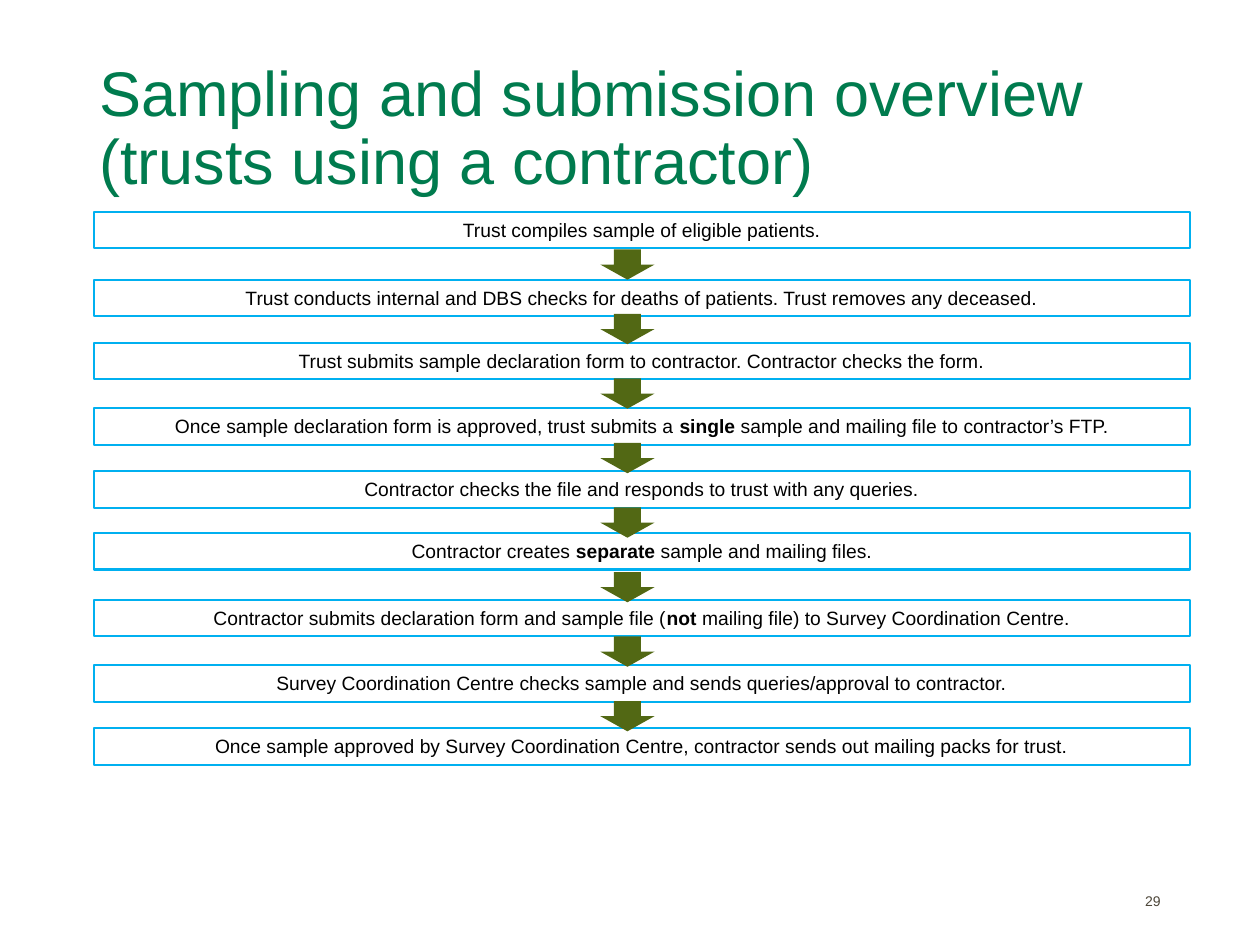
import pptx
import pptx.dml.color
import pptx.enum.shapes
import pptx.enum.text
import pptx.util

COLORS = {"title": "007B4E", "border": "00B0F0", "text": "000000",
          "arrow": "526814", "number": "4D4639"}
FONT = "Arial"
SHAPE = pptx.enum.shapes.MSO_SHAPE
ALIGN = pptx.enum.text.PP_ALIGN
ANCHOR = pptx.enum.text.MSO_ANCHOR

# The slide is a grid of 100 columns by 75 rows.
CELL = pptx.util.Inches(0.1)
TITLE_BOX = (6.9, 4, 86.2, 12.6)
FLOW_BOX = (7.45, 16.8, 87, 43.9)
NUMBER_BOX = (70.6, 69.5, 22.5, 4)

STEP_HEIGHT = 2.9
ARROW_WIDTH, ARROW_HEIGHT = 4.3, 2.4
ARROW_LEFT, ARROW_TOP, ARROW_PITCH = 40.2, 3, 5.12

# Row of each step below the top of the flow, and its text; ** marks bold.
STEPS = [
    (0, "Trust compiles sample of eligible patients."),
    (5.4, "Trust conducts internal and DBS checks for deaths of patients. "
          "Trust removes any deceased."),
    (10.4, "Trust submits sample declaration form to contractor. "
           "Contractor checks the form."),
    (15.6, "Once sample declaration form is approved, trust submits a "
           "**single** sample and mailing file to contractor’s FTP."),
    (20.6, "Contractor checks the file and responds to trust with any queries."),
    (25.5, "Contractor creates **separate** sample and mailing files."),
    (30.8, "Contractor submits declaration form and sample file "
           "(**not **mailing file) to Survey Coordination Centre."),
    (36, "Survey Coordination Centre checks sample and sends "
         "queries/approval to contractor."),
    (41, "Once sample approved by Survey Coordination Centre, "
         "contractor sends out mailing packs for trust."),
]


def rgb(name):
    return pptx.dml.color.RGBColor.from_string(COLORS[name])


def grid(box):
    """Turn left, top, width and height in grid cells into lengths."""
    return [round(value * CELL) for value in box]


def write_text(shape, text, size, color, align=ALIGN.LEFT,
               anchor=ANCHOR.TOP, line_spacing=None):
    """Fill a shape with one paragraph; text between ** marks is bold."""
    frame = shape.text_frame
    frame.word_wrap = True
    frame.vertical_anchor = anchor
    paragraph = frame.paragraphs[0]
    paragraph.alignment = align
    if line_spacing:
        paragraph.line_spacing = line_spacing
    for index, part in enumerate(text.split("**")):
        run = paragraph.add_run()
        run.text = part
        run.font.name = FONT
        run.font.size = pptx.util.Pt(size)
        run.font.bold = index % 2 == 1
        run.font.color.rgb = rgb(color)


def add_text(slide, box, text, **text_format):
    write_text(slide.shapes.add_textbox(*grid(box)), text, **text_format)


def add_step(slide, box, text):
    shape = slide.shapes.add_shape(SHAPE.RECTANGLE, *grid(box))
    shape.shadow.inherit = False
    shape.fill.background()
    shape.line.color.rgb = rgb("border")
    shape.line.width = pptx.util.Pt(1.25)
    write_text(shape, text, size=11, color="text", align=ALIGN.CENTER)
    shape.text_frame.auto_size = pptx.enum.text.MSO_AUTO_SIZE.SHAPE_TO_FIT_TEXT


def add_arrow(slide, box):
    shape = slide.shapes.add_shape(SHAPE.DOWN_ARROW, *grid(box))
    shape.shadow.inherit = False
    shape.fill.solid()
    shape.fill.fore_color.rgb = rgb("arrow")
    shape.line.fill.background()


def add_flow(slide, box):
    """Stack the steps, with an arrow between each pair."""
    left, top, width, _ = box
    for row, text in STEPS:
        add_step(slide, (left, top + row, width, STEP_HEIGHT), text)
    for index in range(len(STEPS) - 1):
        arrow_top = top + ARROW_TOP + index * ARROW_PITCH
        add_arrow(slide, (left + ARROW_LEFT, arrow_top,
                          ARROW_WIDTH, ARROW_HEIGHT))


def main():
    presentation = pptx.Presentation()
    presentation.slide_width = 100 * CELL
    presentation.slide_height = 75 * CELL
    slide = presentation.slides.add_slide(presentation.slide_layouts[6])
    add_text(slide, TITLE_BOX,
             "Sampling and submission overview (trusts using a contractor)",
             size=36, color="title", anchor=ANCHOR.MIDDLE, line_spacing=0.9)
    add_flow(slide, FLOW_BOX)
    add_text(slide, NUMBER_BOX, "29", size=8, color="number",
             align=ALIGN.RIGHT, anchor=ANCHOR.MIDDLE)
    presentation.save("out.pptx")


if __name__ == "__main__":
    main()
